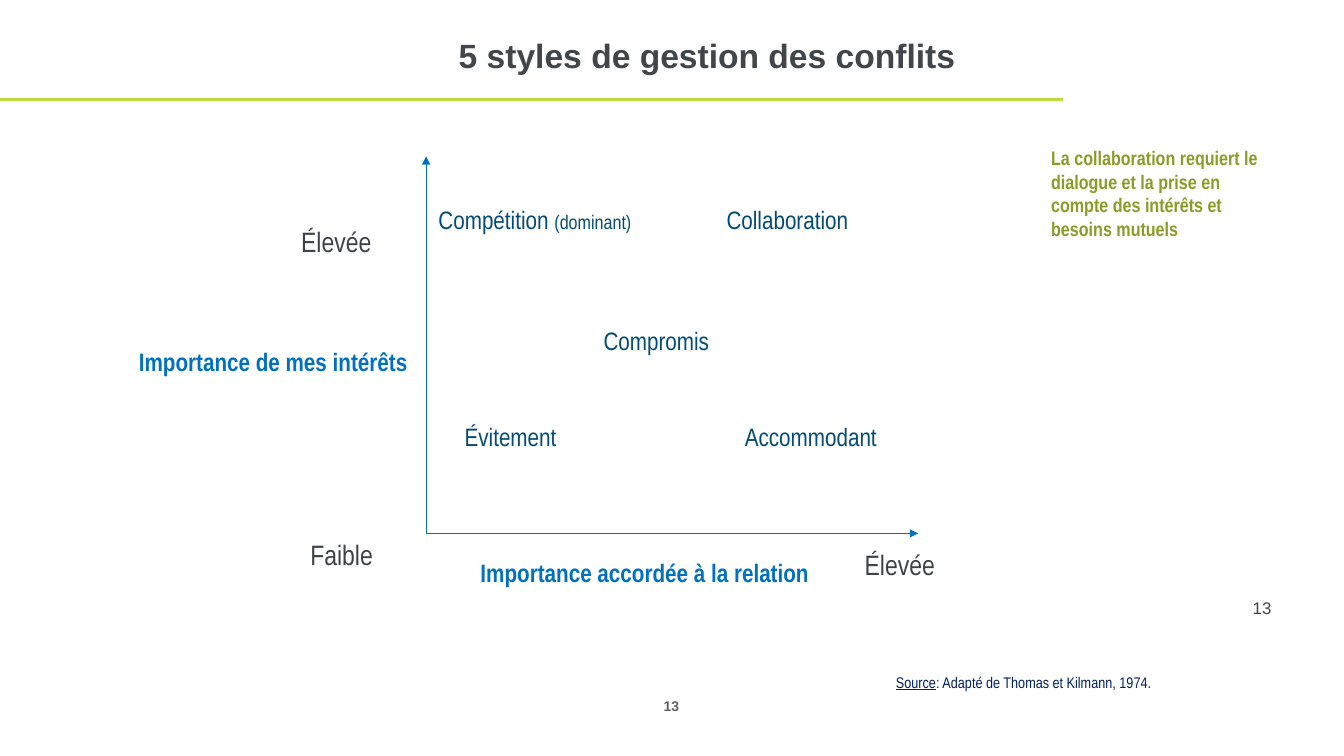
from pptx import Presentation
from pptx.dml.color import RGBColor
from pptx.enum.shapes import MSO_CONNECTOR as Connector
from pptx.enum.text import MSO_ANCHOR as Anchor, PP_ALIGN as Align
from pptx.oxml.ns import qn
from pptx.util import Cm, Pt
from lxml.etree import SubElement

NARROW = "Arial Narrow"
GREY, BLUE, NAVY, OLIVE = "3E4248", "0070C0", "024B76", "8C9B25"
STYLES = [
    ("Compétition ", 10.8, 5.03, 5.41),
    ("Collaboration", 18.06, 5.03, 5.38),
    ("Compromis", 14.96, 8.08, 6.2),
    ("Évitement", 11.46, 10.49, 4.19),
    ("Accommodant", 18.52, 10.49, 6.6),
]
LEVELS = [
    ("Élevée", 7.34, 5.54, 2.79),
    ("Faible", 7.57, 13.41, 3.81),
    ("Élevée", 21.54, 13.67, 2.41),
]


def color(value):
    """Turn a hex string into a colour."""
    return RGBColor.from_string(value)


def add_span(para, text, size=18, fill=NAVY, font=NARROW, bold=False, underline=False):
    """Append formatted text to a paragraph."""
    span = para.add_run()
    span.text = text
    span.font.name = font
    span.font.size = Pt(size)
    span.font.bold = bold
    span.font.underline = underline
    span.font.color.rgb = color(fill)


def add_text(page, text, left, top, width, height=1.02, anchor=Anchor.TOP,
             align=Align.LEFT, wrap=True, **style):
    """Place a text box and return its paragraph."""
    box = page.shapes.add_textbox(Cm(left), Cm(top), Cm(width), Cm(height))
    frame = box.text_frame
    frame.word_wrap = wrap
    frame.vertical_anchor = anchor
    para = frame.paragraphs[0]
    para.alignment = align
    add_span(para, text, **style)
    return para


def add_line(page, start, end, fill, weight, arrow=False):
    """Draw a straight line, with an arrowhead at its end if asked."""
    line = page.shapes.add_connector(
        Connector.STRAIGHT, *(Cm(length) for length in (*start, *end)))
    line.line.color.rgb = color(fill)
    line.line.width = Pt(weight)
    if arrow:
        SubElement(line.line._get_or_add_ln(), qn("a:tailEnd"), type="triangle")
    SubElement(line._element.spPr, qn("a:effectLst"))


def set_title(page, text):
    """Move and format the title placeholder."""
    title = page.shapes.title
    title.left, title.top = Cm(4.24), Cm(0)
    title.width, title.height = Cm(20.09), Cm(2.77)
    title.text_frame.vertical_anchor = Anchor.MIDDLE
    para = title.text_frame.paragraphs[0]
    para.alignment = Align.RIGHT
    add_span(para, text, size=24, fill="40464A", font="Arial", bold=True)


def add_axes(page):
    """Draw both axes with their captions and levels."""
    origin = (10.74, 13.44)
    for end in ((10.74, 3.94), (23.14, 13.44)):
        add_line(page, origin, end, BLUE, 0.75, arrow=True)
    add_text(page, "Importance de mes intérêts", 3.25, 8.61, 7.54,
             fill=BLUE, bold=True)
    add_text(page, "Importance accordée à la relation", 11.86, 13.67, 8.89, 1.27,
             anchor=Anchor.BOTTOM, fill=BLUE, bold=True)
    for text, left, top, width in LEVELS:
        add_text(page, text, left, top, width, 1.12, size=20, fill=GREY)


def add_styles(page):
    """Place the five conflict styles."""
    for text, left, top, width in STYLES:
        para = add_text(page, text, left, top, width)
        if text.startswith("Compétition"):
            add_span(para, "(dominant)", size=14)


def main():
    """Build the slide and save it."""
    deck = Presentation()
    deck.slide_width, deck.slide_height = Cm(33.87), Cm(19.05)
    page = deck.slides.add_slide(deck.slide_layouts[5])
    set_title(page, "5 styles de gestion des conflits")
    add_line(page, (26.8, 2.51), (0, 2.51), "C3D941", 2)
    add_axes(page)
    add_styles(page)
    add_text(page, "La collaboration requiert le dialogue et la prise en compte "
             "des intérêts et besoins mutuels", 26.24, 3.56, 6.2, 2.64,
             size=14, fill=OLIVE, bold=True)
    source = add_text(page, "Source", 22.33, 16.84, 6.99, 0.74, wrap=False,
                      size=11, fill="002060", underline=True)
    add_span(source, ": Adapté de Thomas et Kilmann, 1974.", size=11, fill="002060")
    add_text(page, "13", 31.32, 14.94, 2.21, 0.76, size=12, fill=GREY, font="Arial")
    add_text(page, "13", 16.26, 17.48, 1.32, 0.61, anchor=Anchor.MIDDLE,
             align=Align.CENTER, size=10, fill="606060", font="Arial", bold=True)
    deck.save("out.pptx")


if __name__ == "__main__":
    main()
